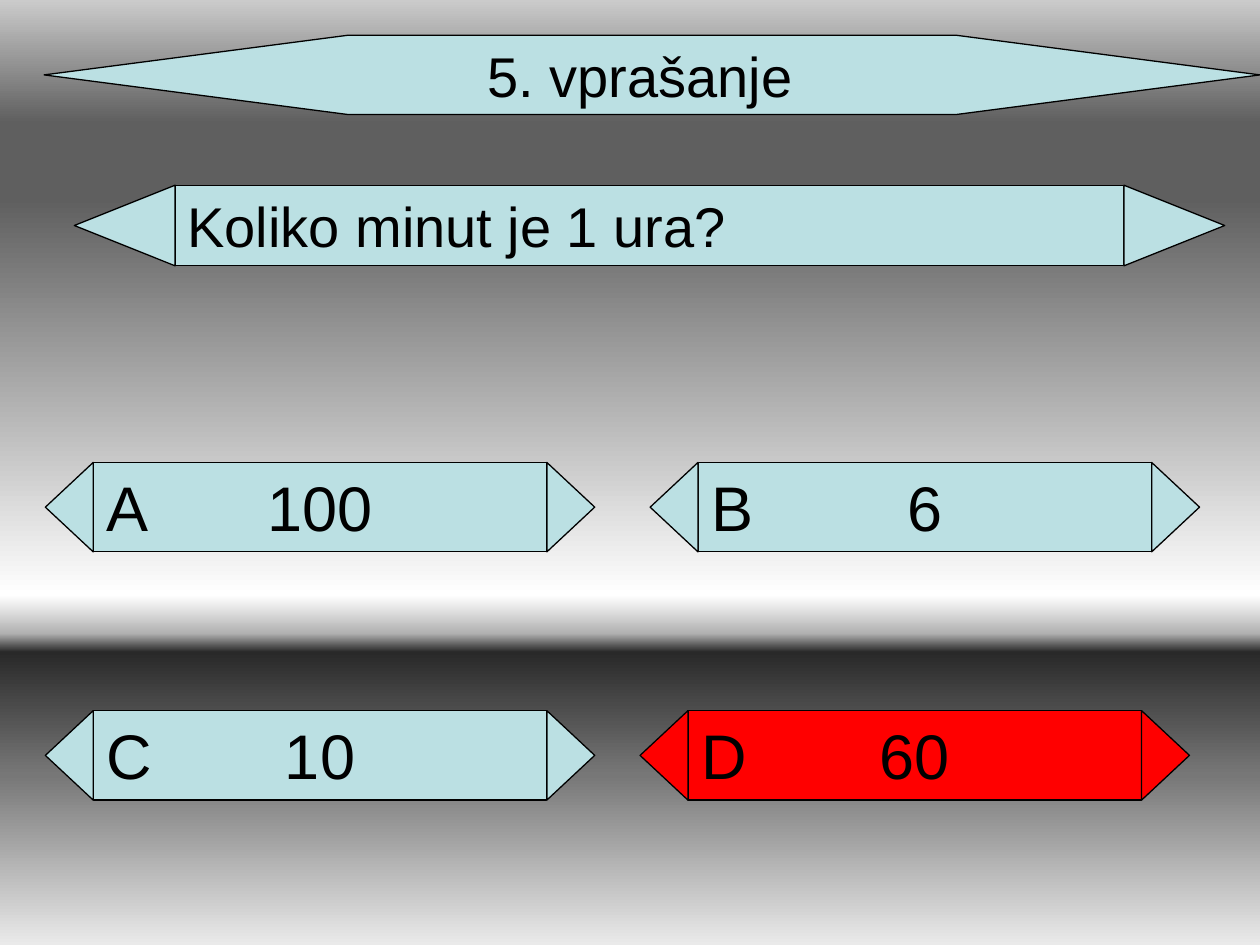
from dataclasses import dataclass

from lxml.etree import SubElement
from pptx import Presentation
from pptx.dml.color import RGBColor
from pptx.enum.shapes import MSO_SHAPE
from pptx.enum.text import MSO_ANCHOR, MSO_AUTO_SIZE, PP_ALIGN
from pptx.oxml.ns import qn
from pptx.util import Inches, Pt

PALE_BLUE, RED, BLACK = "BBE0E3", "FF0000", "000000"
BACKGROUND_STOPS = [
    (0, "CBCBCB"), (13, "5F5F5F"), (21, "5F5F5F"), (63, "FFFFFF"),
    (67, "B2B2B2"), (69, "292929"), (82, "777777"), (100, "EAEAEA"),
]


@dataclass
class Banner:
    """A rectangle with a pointed wing on each side."""
    left: float
    top: float
    width: float
    height: float
    wing: float
    fill: str = PALE_BLUE


@dataclass
class Answer:
    letter: str
    text: str
    left: float
    top: float
    fill: str = PALE_BLUE


ANSWERS = [
    Answer("A", "100", 0.74, 3.67),
    Answer("C", "10", 0.74, 5.64),
    Answer("B", "6", 5.54, 3.67),
    Answer("D", "60", 5.46, 5.64, RED),
]


def color(value: str) -> RGBColor:
    return RGBColor.from_string(value)


def paint_background(page) -> None:
    fill = page.background.fill
    fill.gradient()
    fill.gradient_angle = 270
    stops = next(page.element.iter(qn("a:gsLst")))
    for stop in list(stops):
        stops.remove(stop)
    for percent, value in BACKGROUND_STOPS:
        stop = SubElement(stops, qn("a:gs"), pos=str(percent * 1000))
        SubElement(stop, qn("a:srgbClr"), val=value)


def add_outlined(shapes, kind, left: float, top: float, width: float,
                 height: float, fill: str):
    shape = shapes.add_shape(kind, Inches(left), Inches(top),
                             Inches(width), Inches(height))
    shape.shadow.inherit = False
    shape.fill.solid()
    shape.fill.fore_color.rgb = color(fill)
    shape.line.color.rgb = color(BLACK)
    shape.line.width = Pt(0.75)
    return shape


def write(box, text: str, size: int, align=PP_ALIGN.LEFT) -> None:
    frame = box.text_frame
    frame.word_wrap = True
    frame.auto_size = MSO_AUTO_SIZE.SHAPE_TO_FIT_TEXT
    frame.vertical_anchor = MSO_ANCHOR.TOP
    para = frame.paragraphs[0]
    para.text = text
    para.alignment = align
    para.font.name = "Arial"
    para.font.size = Pt(size)
    para.font.color.rgb = color(BLACK)


def add_label(shapes, left: float, top: float, width: float, height: float,
              text: str, size: int, align=PP_ALIGN.LEFT) -> None:
    box = shapes.add_textbox(Inches(left), Inches(top),
                             Inches(width), Inches(height))
    write(box, text, size, align)


def add_banner(shapes, banner: Banner, text: str, size: int,
               align=PP_ALIGN.LEFT) -> None:
    body = add_outlined(shapes, MSO_SHAPE.RECTANGLE, banner.left, banner.top,
                        banner.width, banner.height, banner.fill)
    write(body, text, size, align)
    # The wings are triangles turned a quarter, so their sides swap
    middle = banner.top + banner.height / 2
    for center, rotation in (
        (banner.left + banner.width + banner.wing / 2, 90),
        (banner.left - banner.wing / 2, 270),
    ):
        wing = add_outlined(shapes, MSO_SHAPE.ISOSCELES_TRIANGLE,
                            center - banner.height / 2, middle - banner.wing / 2,
                            banner.height, banner.wing, banner.fill)
        wing.rotation = rotation


def add_answer(page, answer: Answer) -> None:
    shapes = page.shapes.add_group_shape().shapes
    banner = Banner(answer.left, answer.top, 3.6, 0.71, 0.38, answer.fill)
    add_banner(shapes, banner, answer.text, 36, PP_ALIGN.CENTER)
    add_label(shapes, answer.left + 0.01, answer.top, 0.47, 0.7,
              answer.letter, 36)


def main() -> None:
    deck = Presentation()
    deck.slide_width, deck.slide_height = Inches(10), Inches(7.5)
    page = deck.slides.add_slide(deck.slide_layouts[6])
    paint_background(page)

    # Title
    title = add_outlined(page.shapes, MSO_SHAPE.HEXAGON,
                         0.35, 0.28, 9.65, 0.63, PALE_BLUE)
    title.adjustments[0] = 3.83
    add_label(page.shapes, 2.72, 0.28, 4.72, 0.63, "5. vprašanje", 32,
              PP_ALIGN.CENTER)

    # Question
    question = page.shapes.add_group_shape().shapes
    add_banner(question, Banner(1.39, 1.47, 7.53, 0.64, 0.8),
               "Koliko minut je 1 ura?", 32)

    # Answers
    for answer in ANSWERS:
        add_answer(page, answer)

    deck.save("out.pptx")


if __name__ == "__main__":
    main()
